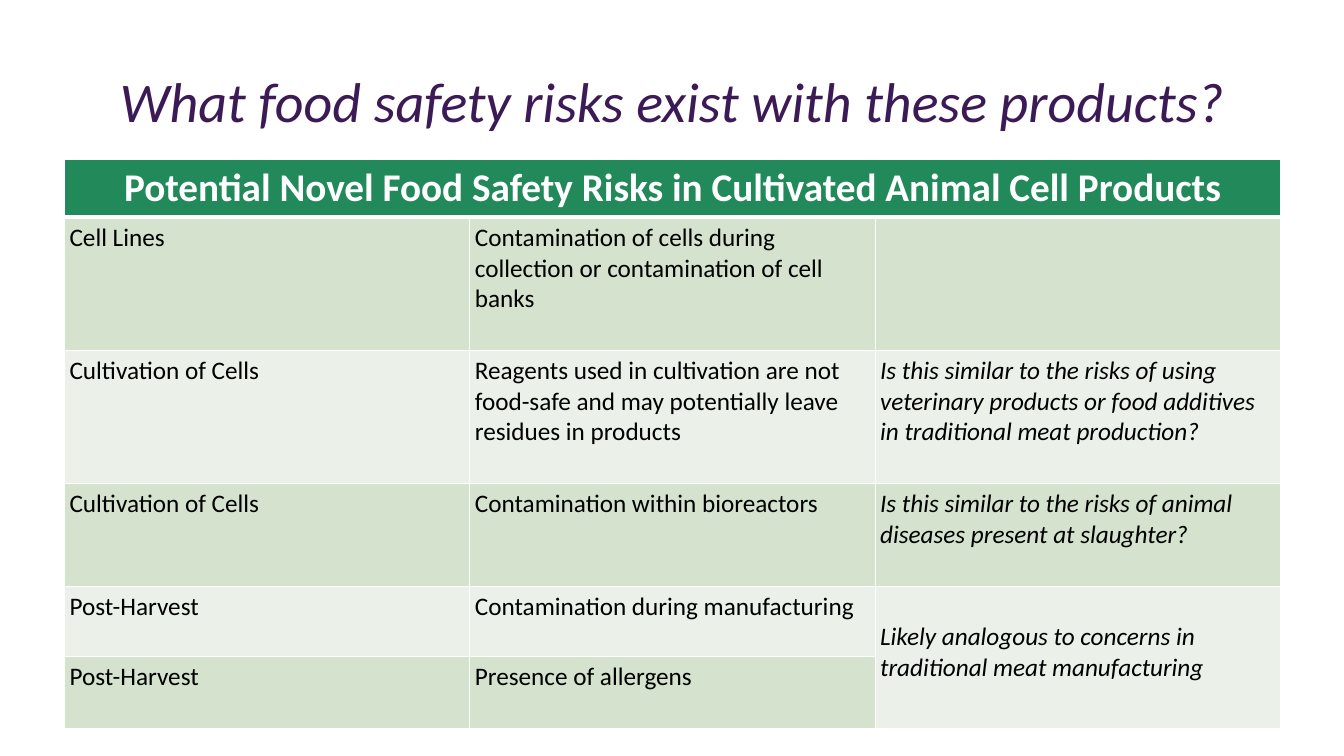
from lxml import etree
from pptx import Presentation
from pptx import util as u
from pptx.dml.color import RGBColor
from pptx.enum import text
from pptx.oxml import ns

PURPLE = RGBColor(0x3C, 0x1A, 0x56)
GREEN = RGBColor(0x22, 0x89, 0x5A)
SAGE = RGBColor(0xD4, 0xE2, 0xCE)
PALE = RGBColor(0xEB, 0xF1, 0xE8)
WHITE = RGBColor(0xFF, 0xFF, 0xFF)
BLACK = RGBColor(0, 0, 0)

FONT = "Calibri"
INSET = u.Inches(0.05)
COLUMNS = 3
COLUMN_WIDTH = 4.02
ROW_HEIGHTS = [0.57, 1.32, 1.32, 1.02, 0.7, 0.71]

TITLE = "What food safety risks exist with these products?"
HEADING = "Potential Novel Food Safety Risks in Cultivated Animal Cell Products"
RISKS = [
    ("Cell Lines",
     "Contamination of cells during collection or contamination of cell banks",
     ""),
    ("Cultivation of Cells",
     "Reagents used in cultivation are not food-safe and may potentially leave "
     "residues in products",
     "Is this similar to the risks of using veterinary products or food "
     "additives in traditional meat production?"),
    ("Cultivation of Cells",
     "Contamination within bioreactors",
     "Is this similar to the risks of animal diseases present at slaughter?"),
    ("Post-Harvest",
     "Contamination during manufacturing",
     "Likely analogous to concerns in traditional meat manufacturing"),
    ("Post-Harvest", "Presence of allergens", ""),
]


def set_insets(box):
    box.margin_left = box.margin_right = INSET
    box.margin_top = box.margin_bottom = INSET


def write(tf, words, size, color, bold=False, italic=False, align=text.PP_ALIGN.LEFT):
    p = tf.paragraphs[0]
    p.alignment = align
    r = p.add_run()
    r.text = words
    r.font.name = FONT
    r.font.size = u.Pt(size)
    r.font.bold = bold
    r.font.italic = italic
    r.font.color.rgb = color


def add_borders(cell, bottom=1):
    """Draw white cell borders, with the bottom width given in points."""
    tc_pr = cell._tc.get_or_add_tcPr()
    for side, width in zip("LRTB", (1, 1, 1, bottom)):
        line = etree.SubElement(tc_pr, ns.qn(f"a:ln{side}"), w=str(u.Pt(width)))
        fill = etree.SubElement(line, ns.qn("a:solidFill"))
        etree.SubElement(fill, ns.qn("a:srgbClr"), val=str(WHITE))


def format_cell(cell, color, bottom=1):
    set_insets(cell)
    add_borders(cell, bottom)
    cell.fill.solid()
    cell.fill.fore_color.rgb = color


def add_title(s, prs):
    title = s.shapes.title
    title.left, title.top = 0, u.Inches(0.4)
    title.width, title.height = prs.slide_width, u.Inches(1.18)
    tf = title.text_frame
    tf.word_wrap = True
    tf.vertical_anchor = text.MSO_ANCHOR.MIDDLE
    set_insets(tf)
    write(tf, TITLE, 40, PURPLE, italic=True, align=text.PP_ALIGN.CENTER)


def add_risk_table(s):
    frame = s.shapes.add_table(
        len(ROW_HEIGHTS), COLUMNS, u.Inches(0.64), u.Inches(1.58),
        u.Inches(COLUMNS * COLUMN_WIDTH), u.Inches(sum(ROW_HEIGHTS)))
    table = frame.table
    table.horz_banding = False
    for column in table.columns:
        column.width = u.Inches(COLUMN_WIDTH)
    for row, height in zip(table.rows, ROW_HEIGHTS):
        row.height = u.Inches(height)

    heading = table.cell(0, 0)
    heading.merge(table.cell(0, COLUMNS - 1))
    for cell in table.rows[0].cells:
        format_cell(cell, GREEN, bottom=3)
    heading.vertical_anchor = text.MSO_ANCHOR.MIDDLE
    write(heading.text_frame, HEADING, 28, WHITE, bold=True,
          align=text.PP_ALIGN.CENTER)

    for i, risk in enumerate(RISKS, start=1):
        for j, words in enumerate(risk):
            cell = table.cell(i, j)
            format_cell(cell, SAGE if i % 2 else PALE)
            if words:
                write(cell.text_frame, words, 18, BLACK, italic=j == COLUMNS - 1)

    shared = table.cell(len(RISKS) - 1, COLUMNS - 1)
    shared.merge(table.cell(len(RISKS), COLUMNS - 1))
    shared.vertical_anchor = text.MSO_ANCHOR.MIDDLE
    shared.margin_bottom = 3 * INSET


def main():
    prs = Presentation()
    prs.slide_width, prs.slide_height = u.Inches(13.33), u.Inches(7.5)
    s = prs.slides.add_slide(prs.slide_layouts[5])
    add_title(s, prs)
    add_risk_table(s)
    prs.save("out.pptx")


if __name__ == "__main__":
    main()
